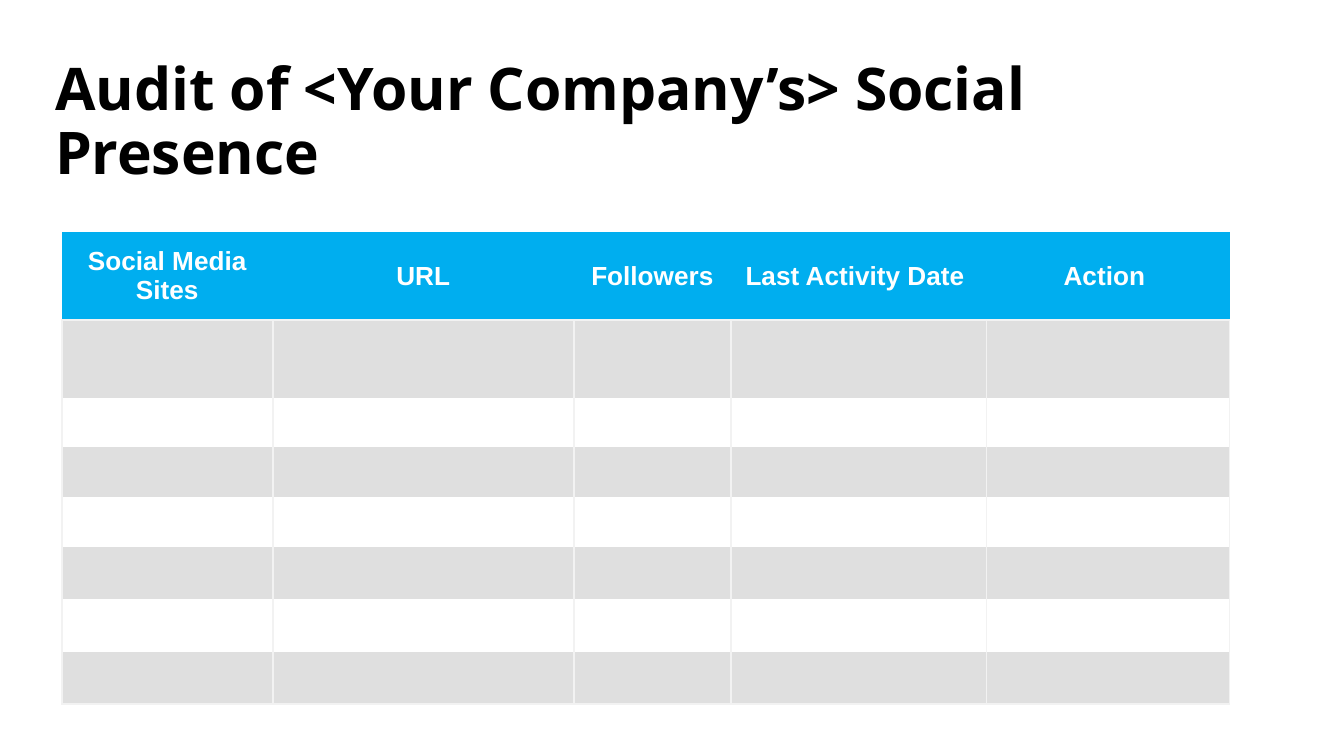
from lxml import etree
from pptx import Presentation
from pptx.dml.color import RGBColor
from pptx.enum.text import MSO_ANCHOR, PP_ALIGN
from pptx.oxml.ns import qn
from pptx.util import Inches, Pt

MIDDLE = MSO_ANCHOR.MIDDLE
LEFT = PP_ALIGN.LEFT
CENTER = PP_ALIGN.CENTER

BLACK = RGBColor(0x00, 0x00, 0x00)
WHITE = RGBColor(0xFF, 0xFF, 0xFF)
SKY = RGBColor(0x00, 0xAE, 0xEF)
BAND = RGBColor(0xDF, 0xDF, 0xDF)
RULE = RGBColor(0xF2, 0xF2, 0xF2)

HEADINGS = ["Social Media Sites", "URL", "Followers", "Last Activity Date ", "Action "]
COLUMN_WIDTHS = [1.57, 2.24, 1.17, 1.9, 1.81]
ROW_HEIGHTS = [0.65, 0.58] + [0.37] * 3 + [0.39] * 3


def write(frame, text, font="Arial", size=14, color=BLACK, bold=True,
          align=LEFT, spacing=1.0):
    paragraph = frame.paragraphs[0]
    paragraph.alignment = align
    paragraph.line_spacing = spacing
    run = paragraph.add_run()
    run.text = text
    run.font.name = font
    run.font.size = Pt(size)
    run.font.bold = bold
    run.font.color.rgb = color


def set_borders(cell, ruled_sides):
    properties = cell._tc.get_or_add_tcPr()
    for position, side in enumerate("LRTB"):
        line = etree.Element(qn(f"a:ln{side}"), w=str(Pt(1)))
        if side in ruled_sides:
            fill = etree.SubElement(line, qn("a:solidFill"))
            etree.SubElement(fill, qn("a:srgbClr"), val=str(RULE))
        else:
            etree.SubElement(line, qn("a:noFill"))
        properties.insert(position, line)


class AuditSlide:
    title_font = "Open Sans"
    title_size = 31.5

    def __init__(self, presentation):
        self.slide = presentation.slides.add_slide(presentation.slide_layouts[6])

    def title(self, text, left, top, width, height):
        box = self.slide.shapes.add_textbox(
            Inches(left), Inches(top), Inches(width), Inches(height))
        frame = box.text_frame
        frame.word_wrap = True
        frame.vertical_anchor = MIDDLE
        frame.margin_left = frame.margin_right = 0
        frame.margin_top = frame.margin_bottom = 0
        write(frame, text, font=self.title_font, size=self.title_size, spacing=0.9)

    def table(self, headings, widths, heights, left, top):
        audit = self.slide.shapes.add_table(
            len(heights), len(widths), Inches(left), Inches(top),
            Inches(sum(widths)), Inches(sum(heights))).table
        audit.first_row = False
        audit.horz_banding = False
        for column, width in zip(audit.columns, widths):
            column.width = Inches(width)
        last = len(heights) - 1
        for index, height in enumerate(heights):
            row = audit.rows[index]
            row.height = Inches(height)
            for heading, cell in zip(headings, row.cells):
                cell.vertical_anchor = MIDDLE
                cell.margin_left = cell.margin_right = Inches(0.05)
                cell.margin_top = cell.margin_bottom = Inches(0.02 if index else 0.05)
                cell.fill.solid()
                if index == 0:
                    cell.fill.fore_color.rgb = SKY
                    write(cell.text_frame, heading, color=WHITE, align=CENTER)
                    set_borders(cell, "B")
                else:
                    cell.fill.fore_color.rgb = BAND if index % 2 else WHITE
                    edge = {1: "T", last: "B"}.get(index, "")
                    set_borders(cell, "LR" + edge)


def main():
    presentation = Presentation()
    presentation.slide_width = Inches(10)
    presentation.slide_height = Inches(10) * 9 // 16
    audit = AuditSlide(presentation)
    audit.table(HEADINGS, COLUMN_WIDTHS, ROW_HEIGHTS, 0.46, 1.73)
    audit.title("Audit of <Your Company’s> Social Presence", 0.41, 0.61, 9.23, 0.62)
    presentation.save("out.pptx")


if __name__ == "__main__":
    main()
